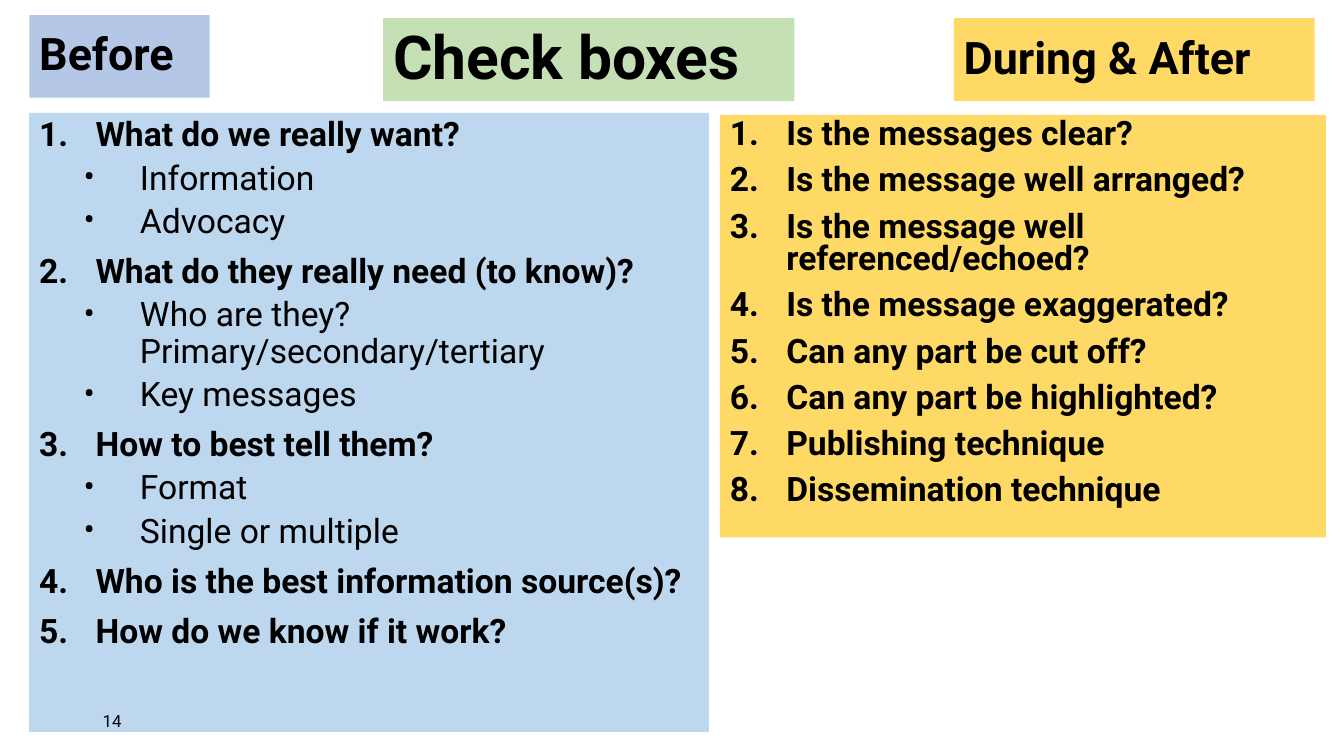
from dataclasses import dataclass

import lxml.etree
import pptx
import pptx.dml.color
import pptx.enum.shapes
import pptx.enum.text
import pptx.oxml.ns
import pptx.util

Inches = pptx.util.Inches
ANCHOR = pptx.enum.text.MSO_ANCHOR
COLOURS = {
    "text": "000000",
    "green": "C5E0B4",
    "pale_blue": "BDD7EE",
    "blue": "B4C7E7",
    "yellow": "FFD966",
}


@dataclass
class Line:
    text: str
    level: int = 0


@dataclass
class Panel:
    left: float
    top: float
    width: float
    height: float
    colour: str
    lines: list[Line]
    size: float
    spacing: float = 0.9
    listed: bool = False


@dataclass
class ListStyle:
    indent: float
    before: float
    bold: bool
    marker: str
    marker_format: dict[str, str]


LIST_STYLES = [
    ListStyle(0.56, 10, True, "a:buAutoNum", {"type": "arabicPeriod"}),
    ListStyle(1, 5, False, "a:buChar", {"char": "•"}),
]
HANGING = 0.56

TITLE = Panel(3.8, 0.18, 4.08, 0.82, "green", [Line("Check boxes")], 43.2)
PANELS = [
    Panel(0.29, 1.12, 6.74, 6.14, "pale_blue", [
        Line("What do we really want?"),
        Line("Information", 1),
        Line("Advocacy", 1),
        Line("What do they really need (to know)?"),
        Line("Who are they? Primary/secondary/tertiary", 1),
        Line("Key messages", 1),
        Line("How to best tell them?"),
        Line("Format", 1),
        Line("Single or multiple", 1),
        Line("Who is the best information source(s)?"),
        Line("How do we know if it work?"),
    ], 24, listed=True),
    Panel(7.14, 1.14, 6.01, 4.19, "yellow", [
        Line("Is the messages clear?"),
        Line("Is the message well arranged?"),
        Line("Is the message well referenced/echoed?"),
        Line("Is the message exaggerated?"),
        Line("Can any part be cut off?"),
        Line("Can any part be highlighted?"),
        Line("Publishing technique"),
        Line("Dissemination technique"),
    ], 24, spacing=0.8, listed=True),
    Panel(0.29, 0.15, 1.79, 0.82, "blue", [Line("Before")], 32),
    Panel(9.46, 0.18, 3.58, 0.82, "yellow", [Line("During & After")], 32),
]


def apply(target, values: dict) -> None:
    for name, value in values.items():
        setattr(target, name, value)


def rgb(name: str) -> pptx.dml.color.RGBColor:
    return pptx.dml.color.RGBColor.from_string(COLOURS[name])


def write(para, text: str, size: float, bold: bool) -> None:
    para.alignment = pptx.enum.text.PP_ALIGN.LEFT
    span = para.add_run()
    span.text = text
    apply(span.font, {"name": "Roboto", "size": pptx.util.Pt(size), "bold": bold})
    span.font.color.rgb = rgb("text")


def add_marker(para, style: ListStyle) -> None:
    para.space_before = pptx.util.Pt(style.before)
    properties = para._p.get_or_add_pPr()
    properties.set("marL", str(Inches(style.indent)))
    properties.set("indent", str(-Inches(HANGING)))
    qualified = pptx.oxml.ns.qn
    lxml.etree.SubElement(properties, qualified("a:buFont"), typeface="Roboto")
    lxml.etree.SubElement(properties, qualified(style.marker), style.marker_format)


def fill_panel(box, panel: Panel) -> None:
    apply(box, {
        "left": Inches(panel.left),
        "top": Inches(panel.top),
        "width": Inches(panel.width),
        "height": Inches(panel.height),
    })
    box.fill.solid()
    box.fill.fore_color.rgb = rgb(panel.colour)
    box.line.fill.background()
    frame = box.text_frame
    apply(frame, {
        "word_wrap": True,
        "auto_size": pptx.enum.text.MSO_AUTO_SIZE.NONE,
        "vertical_anchor": ANCHOR.TOP if panel.listed else ANCHOR.MIDDLE,
    })
    for index, line in enumerate(panel.lines):
        para = frame.add_paragraph() if index else frame.paragraphs[0]
        style = LIST_STYLES[line.level]
        apply(para, {"level": line.level, "line_spacing": panel.spacing})
        write(para, line.text, panel.size, style.bold)
        if panel.listed:
            add_marker(para, style)


def add_panel(page, panel: Panel) -> None:
    box = page.shapes.add_shape(pptx.enum.shapes.MSO_SHAPE.RECTANGLE, 0, 0, 0, 0)
    box.shadow.inherit = False
    fill_panel(box, panel)


def add_page_number(page, number: str) -> None:
    box = page.shapes.add_textbox(Inches(0.92), Inches(6.95), Inches(3), Inches(0.4))
    apply(box.text_frame, {"word_wrap": True, "vertical_anchor": ANCHOR.MIDDLE})
    write(box.text_frame.paragraphs[0], number, 12, False)


def main() -> None:
    deck = pptx.Presentation()
    apply(deck, {"slide_width": Inches(13.33), "slide_height": Inches(7.5)})
    page = deck.slides.add_slide(deck.slide_layouts[5])
    fill_panel(page.shapes.title, TITLE)
    for panel in PANELS:
        add_panel(page, panel)
    add_page_number(page, "14")
    deck.save("out.pptx")


if __name__ == "__main__":
    main()
